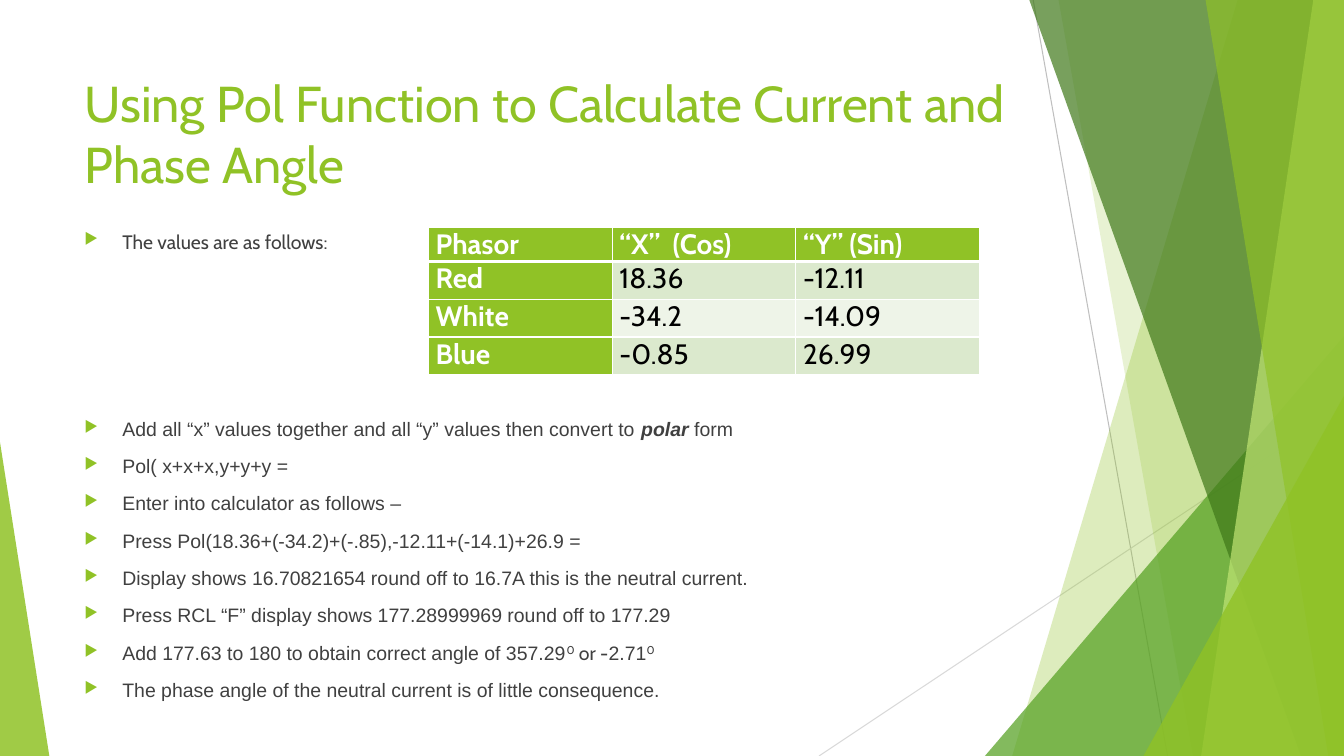
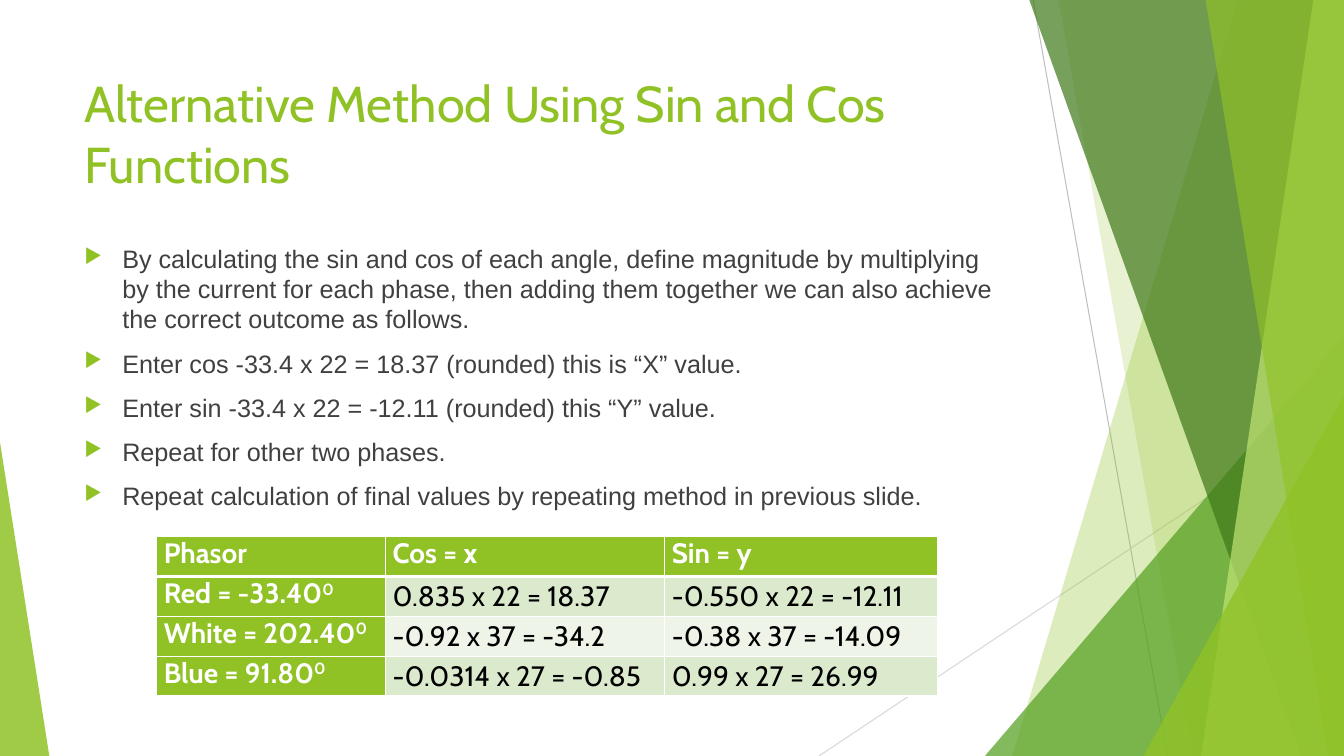
from lxml import etree
from pptx import Presentation
from pptx.dml.color import RGBColor
from pptx.enum.shapes import MSO_CONNECTOR, MSO_SHAPE
from pptx.enum.text import MSO_ANCHOR
from pptx.oxml.ns import qn
from pptx.util import Pt

PX = 9525  # EMU in one px
WIDTH, HEIGHT = 1280, 720
STRAIGHT = MSO_CONNECTOR.STRAIGHT
TRIANGLE = MSO_SHAPE.RIGHT_TRIANGLE
ISOSCELES = MSO_SHAPE.ISOSCELES_TRIANGLE
TOP, MIDDLE = MSO_ANCHOR.TOP, MSO_ANCHOR.MIDDLE

GREEN = RGBColor(0x90, 0xC2, 0x26)
MID_GREEN = RGBColor(0x54, 0xA0, 0x21)
DARK_GREEN = RGBColor(0x3F, 0x78, 0x19)
LIME = RGBColor(0xC0, 0xE4, 0x74)
BAND_DARK = RGBColor(0xDB, 0xE9, 0xCD)
BAND_LIGHT = RGBColor(0xEE, 0xF4, 0xE8)
GREY_LINE = RGBColor(0xBF, 0xBF, 0xBF)
PALE_LINE = RGBColor(0xD9, 0xD9, 0xD9)
BODY_GREY = RGBColor(0x40, 0x40, 0x40)
WHITE = RGBColor(0xFF, 0xFF, 0xFF)
BLACK = RGBColor(0x00, 0x00, 0x00)

HEAD_FONT, BODY_FONT = "Cabin", "Arial"

# Run styles
CABIN = {"name": HEAD_FONT}
SUPER = {"name": HEAD_FONT, "raised": True}
EMPHASIS = {"bold": True, "italic": True}

TITLE_BOX = (71, 64, 902, 138)

# Background pieces, back to front, measured from the right edge:
# a band has its top and bottom x, a peak its width and height
BAND, PEAK = "band", "peak"
FACETS = [
    (BAND, 101, 316, GREEN, 30),
    (BAND, 272, 144, GREEN, 20),
    (PEAK, 342, 400, MID_GREEN, 72),
    (BAND, 300, 41, DARK_GREEN, 70),
    (BAND, 29, 136, LIME, 70),
    (BAND, 132, 15, GREEN, 65),
    (PEAK, 191, 343, GREEN, 80),
]


def px(*values):
    return [round(v * PX) for v in values]


def paint(sp, color, alpha):
    sp.shadow.inherit = False
    sp.line.fill.background()
    sp.fill.solid()
    sp.fill.fore_color.rgb = color
    clr = sp.fill._xPr.find(qn("a:solidFill"))[0]
    etree.SubElement(clr, qn("a:alpha"), val=str(alpha * 1000))


def add_line(slide, x1, y1, x2, y2, color):
    line = slide.shapes.add_connector(STRAIGHT, *px(x1, y1, x2, y2))
    line.line.color.rgb = color
    line.line.width = Pt(0.75)
    etree.SubElement(line._element.spPr, qn("a:effectLst"))


def add_peak(slide, box, lean, color, alpha):
    sp = slide.shapes.add_shape(ISOSCELES, *px(*box))
    sp.adjustments[0] = lean
    paint(sp, color, alpha)


def add_background(slide, x, y, w, h):
    right, bottom = x + w, y + h
    add_line(slide, right - 296, y, right - 168, bottom, GREY_LINE)
    add_line(slide, right, y + 387, right - 500, bottom, PALE_LINE)
    for kind, a, b, color, alpha in FACETS:
        if kind == PEAK:
            add_peak(slide, (right - a, bottom - b, a, b), 1, color, alpha)
            continue
        band = slide.shapes.build_freeform(right - a, y - 1, PX)
        band.add_line_segments(
            [(right, y - 1), (right, bottom), (right - b, bottom)])
        paint(band.convert_to_shape(), color, alpha)
    add_peak(slide, (x, bottom - 299, 47, 299), 0, GREEN, 85)


def add_runs(p, parts, size, color, name, bold=False):
    """Fill a paragraph from a string or a list of strings and (text, style)."""
    for part in [parts] if isinstance(parts, str) else parts:
        text, style = (part, {}) if isinstance(part, str) else part
        r = p.add_run()
        r.text = text
        r.font.size = Pt(size)
        r.font.color.rgb = color
        r.font.name = style.get("name", name)
        r.font.bold = style.get("bold", bold)
        r.font.italic = style.get("italic", False)
        if style.get("raised"):
            r.font._element.set("baseline", "30000")


def add_text_box(slide, box):
    tf = slide.shapes.add_textbox(*px(*box)).text_frame
    tf.word_wrap = True
    tf.vertical_anchor = TOP
    return tf


def add_title(slide, box, text):
    p = add_text_box(slide, box).paragraphs[0]
    p.text = text
    for r in p.runs:
        r.font.size = Pt(36)
        r.font.name = HEAD_FONT
        r.font.color.rgb = GREEN


def add_bullets(slide, box, items, size, gaps=None):
    """gaps maps an item's index to its own space before, in points."""
    tf = add_text_box(slide, box)
    for i, item in enumerate(items):
        p = tf.add_paragraph() if i else tf.paragraphs[0]
        if i:
            p.space_before = Pt((gaps or {}).get(i, 10))
        pPr = p._p.get_or_add_pPr()
        pPr.set("marL", str(36 * PX))
        pPr.set("indent", str(-36 * PX))
        clr = etree.SubElement(pPr, qn("a:buClr"))
        etree.SubElement(clr, qn("a:srgbClr"), val=str(GREEN))
        etree.SubElement(pPr, qn("a:buSzPct"), val="80000")
        etree.SubElement(pPr, qn("a:buChar"), char="▶")
        add_runs(p, item, size, BODY_GREY, BODY_FONT)


def set_borders(cell, top, bottom):
    tcPr = cell._tc.get_or_add_tcPr()
    for side, width in (("L", 1), ("R", 1), ("T", top), ("B", bottom)):
        ln = etree.SubElement(tcPr, qn("a:ln" + side), w=str(Pt(width)))
        fill = etree.SubElement(ln, qn("a:solidFill"))
        etree.SubElement(fill, qn("a:srgbClr"), val=str(WHITE))


def add_phasor_table(slide, x, y, widths, heights, rows, anchor):
    box = px(x, y, sum(widths), sum(heights))
    table = slide.shapes.add_table(len(rows), len(widths), *box).table
    for col, w in zip(table.columns, px(*widths)):
        col.width = w
    for row, h in zip(table.rows, px(*heights)):
        row.height = h
    for i, row in enumerate(rows):
        for j, content in enumerate(row):
            cell = table.cell(i, j)
            heading = i == 0 or j == 0
            set_borders(cell, 3 if i == 1 else 1, 3 if i == 0 else 1)
            cell.fill.solid()
            band = BAND_DARK if i % 2 else BAND_LIGHT
            cell.fill.fore_color.rgb = GREEN if heading else band
            cell.margin_left = cell.margin_right = 7 * PX
            cell.margin_top = cell.margin_bottom = 0
            cell.vertical_anchor = TOP if heading else anchor
            add_runs(cell.text_frame.paragraphs[0], content, 20,
                     WHITE if heading else BLACK, HEAD_FONT, heading)


def new_slide(prs, title):
    slide = prs.slides.add_slide(prs.slide_layouts[6])
    add_background(slide, 0, 0, WIDTH, HEIGHT)
    add_title(slide, TITLE_BOX, title)
    return slide


def pol_function_slide(prs):
    slide = new_slide(
        prs, "Using Pol Function to Calculate Current and Phase Angle")
    add_bullets(slide, (71, 214, 902, 407), [
        [("The values are as follows:", CABIN)],
        ["Add all “x” values together and all “y” values then convert to ",
         ("polar", EMPHASIS), " form"],
        "Pol( x+x+x,y+y+y =",
        "Enter into calculator as follows –",
        "Press Pol(18.36+(-34.2)+(-.85),-12.11+(-14.1)+26.9 =",
        "Display shows 16.70821654 round off to 16.7A this is the neutral "
        "current.",
        "Press RCL “F” display shows 177.28999969 round off to 177.29",
        ["Add 177.63 to 180 to obtain correct angle of 357.29", ("0", SUPER),
         (" or -", CABIN), "2.71", ("0", SUPER)],
        "The phase angle of the neutral current is of little consequence.",
    ], 13.9, {1: 117})
    add_phasor_table(slide, 408, 217, [175] * 3, [29, 36, 36, 36], [
        ["Phasor", "“X”  (Cos)", "“Y” (Sin)"],
        ["Red", "18.36", "-12.11"],
        ["White", "-34.2", "-14.09"],
        ["Blue", "-0.85", "26.99"],
    ], TOP)


def sin_cos_slide(prs):
    slide = new_slide(
        prs, "Alternative Method Using Sin and Cos\vFunctions")
    add_bullets(slide, (71, 227, 902, 407), [
        "By calculating the sin and cos of each angle, define magnitude by "
        "multiplying by the current for each phase, then adding them together "
        "we can also achieve the correct outcome as follows.",
        "Enter cos -33.4 x 22 = 18.37 (rounded) this is “X” value.",
        "Enter sin -33.4 x 22 = -12.11 (rounded) this “Y” value.",
        "Repeat for other two phases.",
        "Repeat calculation of final values by repeating method in previous "
        "slide.",
    ], 18)
    add_phasor_table(slide, 149, 511, [218, 266, 260], [38] * 4, [
        ["Phasor", "Cos = x", "Sin = y"],
        [["Red = -33.40", ("0", SUPER)],
         "0.835 x 22 = 18.37", "-0.550 x 22 = -12.11"],
        [["White = 202.40", ("0", SUPER)],
         "-0.92 x 37 = -34.2", "-0.38 x 37 = -14.09"],
        [["Blue = 91.80", ("0", SUPER)],
         "-0.0314 x 27 = -0.85", "0.99 x 27 = 26.99"],
    ], MIDDLE)


def main():
    prs = Presentation()
    prs.slide_width, prs.slide_height = px(WIDTH, HEIGHT)
    pol_function_slide(prs)
    sin_cos_slide(prs)
    prs.save("out.pptx")


if __name__ == "__main__":
    main()
